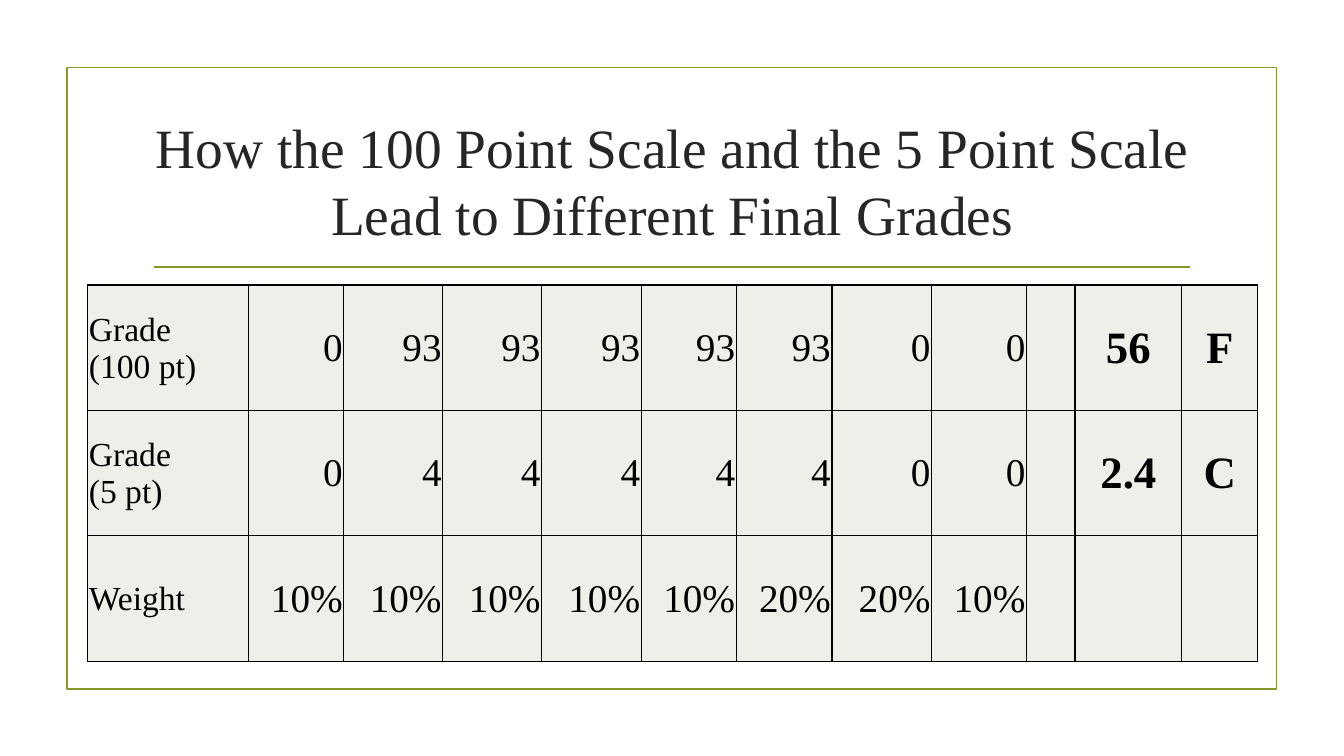
from lxml.etree import SubElement
from pptx import Presentation
from pptx.dml.color import RGBColor
from pptx.enum.shapes import MSO_CONNECTOR, MSO_SHAPE
from pptx.enum.text import MSO_ANCHOR, PP_ALIGN
from pptx.oxml import parse_xml
from pptx.oxml.ns import nsdecls, qn
from pptx.util import Cm, Pt

FONT = "Times New Roman"
GREEN, INK, BLACK, PALE = "83992A", "262626", "000000", "EDEFE8"

COLUMN_WIDTHS = [4.04, 2.41, 2.49, 2.49, 2.51, 2.39, 2.41, 2.51, 2.39, 1.22, 2.69, 1.91]
GRADES = [
    ["Grade\n(100 pt)", "0", *["93"] * 5, "0", "0", "", "56", "F"],
    ["Grade\n(5 pt)", "0", *["4"] * 5, "0", "0", "", "2.4", "C"],
    ["Weight", *["10%"] * 5, "20%", "20%", "10%", "", "", ""],
]
FIRST_RESULT = 10  # column where the final grades begin


def color(value):
    return RGBColor.from_string(value)


def style_text(paragraph, size, ink, align, bold=False):
    paragraph.alignment = align
    paragraph.font.name = FONT
    paragraph.font.size = Pt(size)
    paragraph.font.bold = bold
    paragraph.font.color.rgb = color(ink)


def add_frame(slide, left, top, width, height):
    frame = slide.shapes.add_shape(
        MSO_SHAPE.RECTANGLE, Cm(left), Cm(top), Cm(width), Cm(height))
    frame.shadow.inherit = False
    frame.fill.background()
    frame.line.color.rgb = color(GREEN)
    frame.line.width = Pt(1.25)


def add_heading(slide, left, top, width, height):
    # Rule below the title
    inset, gap = 0.28, 0.38
    y = Cm(top + height + gap)
    rule = slide.shapes.add_connector(
        MSO_CONNECTOR.STRAIGHT, Cm(left + inset), y, Cm(left + width - inset), y)
    rule.line.color.rgb = color(GREEN)
    rule.line.width = Pt(1.25)
    SubElement(rule._element.spPr, qn("a:effectLst"))

    # Title
    title = slide.shapes.add_textbox(Cm(left), Cm(top), Cm(width), Cm(height)).text_frame
    title.word_wrap = True
    title.vertical_anchor = MSO_ANCHOR.MIDDLE
    title.text = ("How the 100 Point Scale and the 5 Point Scale "
                  "Lead to Different Final Grades")
    style_text(title.paragraphs[0], 39.6, INK, PP_ALIGN.CENTER)


def add_borders(cell):
    properties = cell._tc.get_or_add_tcPr()
    for position, side in enumerate(("lnL", "lnR", "lnT", "lnB")):
        properties.insert(position, parse_xml(
            f'<a:{side} {nsdecls("a")} w="{Pt(1)}"><a:solidFill>'
            f'<a:srgbClr val="{BLACK}"/></a:solidFill></a:{side}>'))


def fill_cell(cell, text, column):
    cell.fill.solid()
    cell.fill.fore_color.rgb = color(PALE)
    add_borders(cell)
    cell.vertical_anchor = MSO_ANCHOR.MIDDLE
    cell.margin_left = cell.margin_right = cell.margin_top = Cm(0.03)
    cell.margin_bottom = 0
    cell.text = text
    if column == 0:
        size, align = 24, PP_ALIGN.LEFT
    elif column < FIRST_RESULT:
        size, align = 28, PP_ALIGN.RIGHT
    else:
        size, align = 32, PP_ALIGN.CENTER
    for paragraph in cell.text_frame.paragraphs:
        style_text(paragraph, size, BLACK, align, bold=column >= FIRST_RESULT)


def add_grades(slide, left, top, width, height):
    table = slide.shapes.add_table(
        len(GRADES), len(COLUMN_WIDTHS), Cm(left), Cm(top), Cm(width), Cm(height)).table
    table.first_row = table.horz_banding = False
    for column, share in zip(table.columns, COLUMN_WIDTHS):
        column.width = Cm(width * share / sum(COLUMN_WIDTHS))
    for r, grades in enumerate(GRADES):
        table.rows[r].height = Cm(height / len(GRADES))
        for c, text in enumerate(grades):
            fill_cell(table.cell(r, c), text, c)


def main():
    deck = Presentation()
    deck.slide_width, deck.slide_height = Cm(33.87), Cm(19.05)
    slide = deck.slides.add_slide(deck.slide_layouts[6])
    add_frame(slide, 1.69, 1.7, 30.48, 15.67)
    add_heading(slide, 3.61, 2.72, 26.67, 3.63)
    add_grades(slide, 2.21, 7.18, 29.49, 9.48)
    deck.save("out.pptx")


if __name__ == "__main__":
    main()
